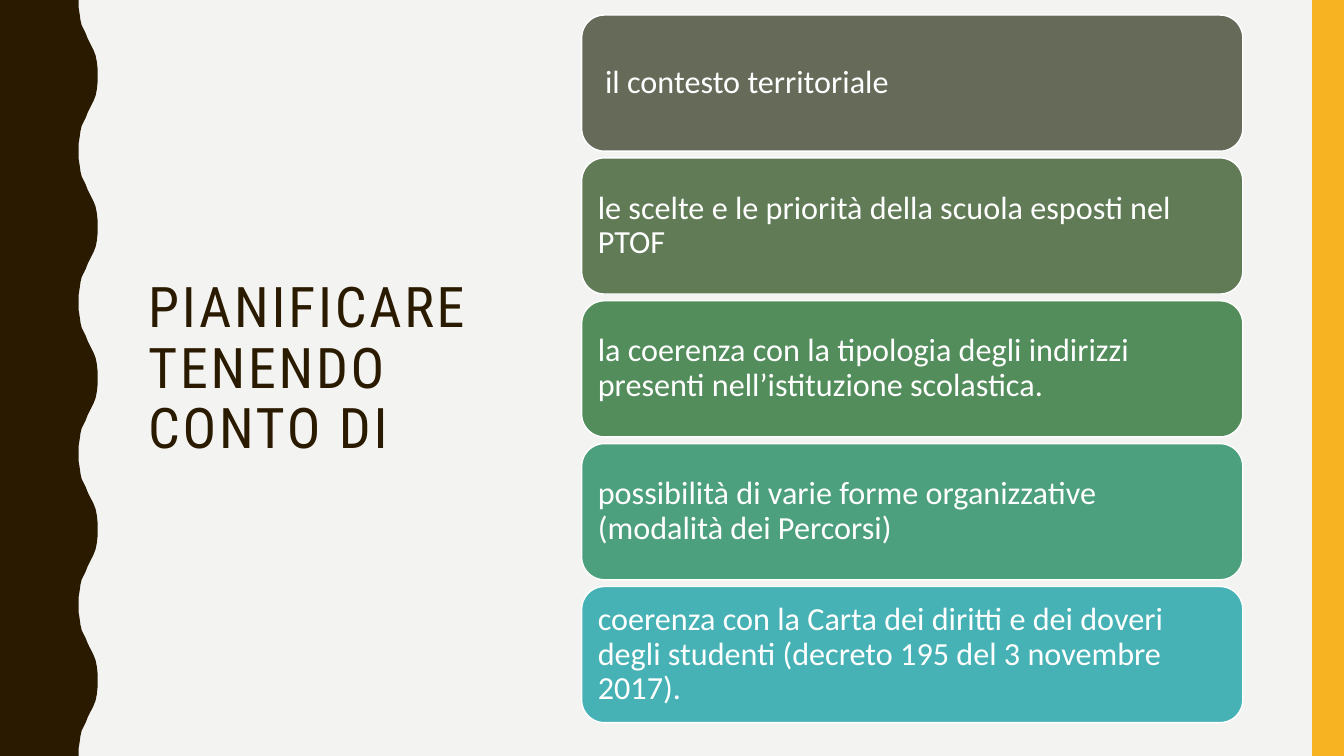
from pptx import Presentation
from pptx.dml.color import RGBColor
from pptx.enum.shapes import MSO_SHAPE as Preset
from pptx.enum.text import MSO_ANCHOR as Anchor, MSO_AUTO_SIZE as AutoSize, PP_ALIGN as Align
from pptx.util import Cm, Pt

BACKGROUND = RGBColor(0xF3, 0xF3, 0xF2)
BROWN = RGBColor(0x2A, 0x1A, 0x00)
AMBER = RGBColor(0xF8, 0xB3, 0x23)
WHITE = RGBColor(0xFF, 0xFF, 0xFF)

SLIDE_WIDTH, SLIDE_HEIGHT = 33.87, 19.05

# Half a wave in cm, from trough to crest; the other half mirrors it
HALF_WAVE = [
    (1.98, 0), (1.98, 0.18), (2.01, 0.36), (2.03, 0.51), (2.06, 0.64),
    (2.11, 0.74), (2.16, 0.84), (2.21, 0.97), (2.26, 1.07), (2.31, 1.17),
    (2.36, 1.27), (2.41, 1.4), (2.44, 1.55), (2.46, 1.73), (2.46, 1.9),
]
WAVE_COUNT = 5
WAVE_LENGTH = SLIDE_HEIGHT / WAVE_COUNT

CARD_LEFT, CARD_TOP = 14.66, 0.38
CARD_WIDTH, CARD_HEIGHT, CARD_PITCH = 16.66, 3.43, 3.6
CARDS = [
    (" il contesto territoriale", RGBColor(0x65, 0x6A, 0x59)),
    ("le scelte e le priorità della scuola esposti nel PTOF",
     RGBColor(0x60, 0x7B, 0x56)),
    ("la coerenza con la tipologia degli indirizzi presenti "
     "nell’istituzione scolastica.", RGBColor(0x52, 0x8D, 0x5B)),
    ("possibilità di varie forme organizzative (modalità dei Percorsi)",
     RGBColor(0x4D, 0xA0, 0x7E)),
    ("coerenza con la Carta dei diritti e dei doveri degli studenti "
     "(decreto 195 del 3 novembre 2017).", RGBColor(0x46, 0xB2, 0xB5)),
]


def paint(shape, color):
    shape.shadow.inherit = False
    shape.fill.solid()
    shape.fill.fore_color.rgb = color
    shape.line.fill.background()


def write(shape, text, font_name, size, color):
    frame = shape.text_frame
    frame.word_wrap = True
    frame.auto_size = AutoSize.NONE
    frame.vertical_anchor = Anchor.MIDDLE
    paragraph = frame.paragraphs[0]
    paragraph.alignment = Align.LEFT
    paragraph.line_spacing = 0.9
    run = paragraph.add_run()
    run.text = text
    run.font.name = font_name
    run.font.size = Pt(size)
    run.font.color.rgb = color
    return run


def add_wavy_edge(slide):
    wave = HALF_WAVE + [(x, WAVE_LENGTH - y) for x, y in reversed(HALF_WAVE)]
    points = [(Cm(x), Cm(y + index * WAVE_LENGTH))
              for index in range(WAVE_COUNT) for x, y in wave]
    builder = slide.shapes.build_freeform(0, 0)
    builder.add_line_segments(points + [(0, Cm(SLIDE_HEIGHT))], close=True)
    paint(builder.convert_to_shape(), BROWN)


def add_side_bar(slide):
    bar = slide.shapes.add_shape(
        Preset.RECTANGLE, Cm(33.07), 0, Cm(0.8), Cm(SLIDE_HEIGHT))
    paint(bar, AMBER)


def set_title(slide, text):
    title = slide.shapes.title
    title.left, title.top = Cm(3.48), Cm(1.8)
    title.width, title.height = Cm(9.4), Cm(15.06)
    run = write(title, text, "Roboto Condensed", 40, BROWN)
    # Letter spacing, in hundredths of a point
    run.font._element.set("spc", "200")


def add_card(slide, top, text, color):
    card = slide.shapes.add_shape(
        Preset.ROUNDED_RECTANGLE, Cm(CARD_LEFT), Cm(top),
        Cm(CARD_WIDTH), Cm(CARD_HEIGHT))
    paint(card, color)
    card.line.color.rgb = WHITE
    card.line.width = Pt(1)
    frame = card.text_frame
    frame.margin_left = frame.margin_right = Cm(0.24)
    frame.margin_top = frame.margin_bottom = Cm(0.24)
    write(card, text, "Calibri", 23, WHITE)


def main():
    presentation = Presentation()
    presentation.slide_width = Cm(SLIDE_WIDTH)
    presentation.slide_height = Cm(SLIDE_HEIGHT)
    slide = presentation.slides.add_slide(presentation.slide_layouts[5])
    slide.background.fill.solid()
    slide.background.fill.fore_color.rgb = BACKGROUND

    # Decoration at both sides
    add_wavy_edge(slide)
    add_side_bar(slide)

    # Title and the column of cards
    set_title(slide, "PIANIFICARE TENENDO CONTO DI")
    for index, (text, color) in enumerate(CARDS):
        add_card(slide, CARD_TOP + index * CARD_PITCH, text, color)

    presentation.save("out.pptx")


if __name__ == "__main__":
    main()
